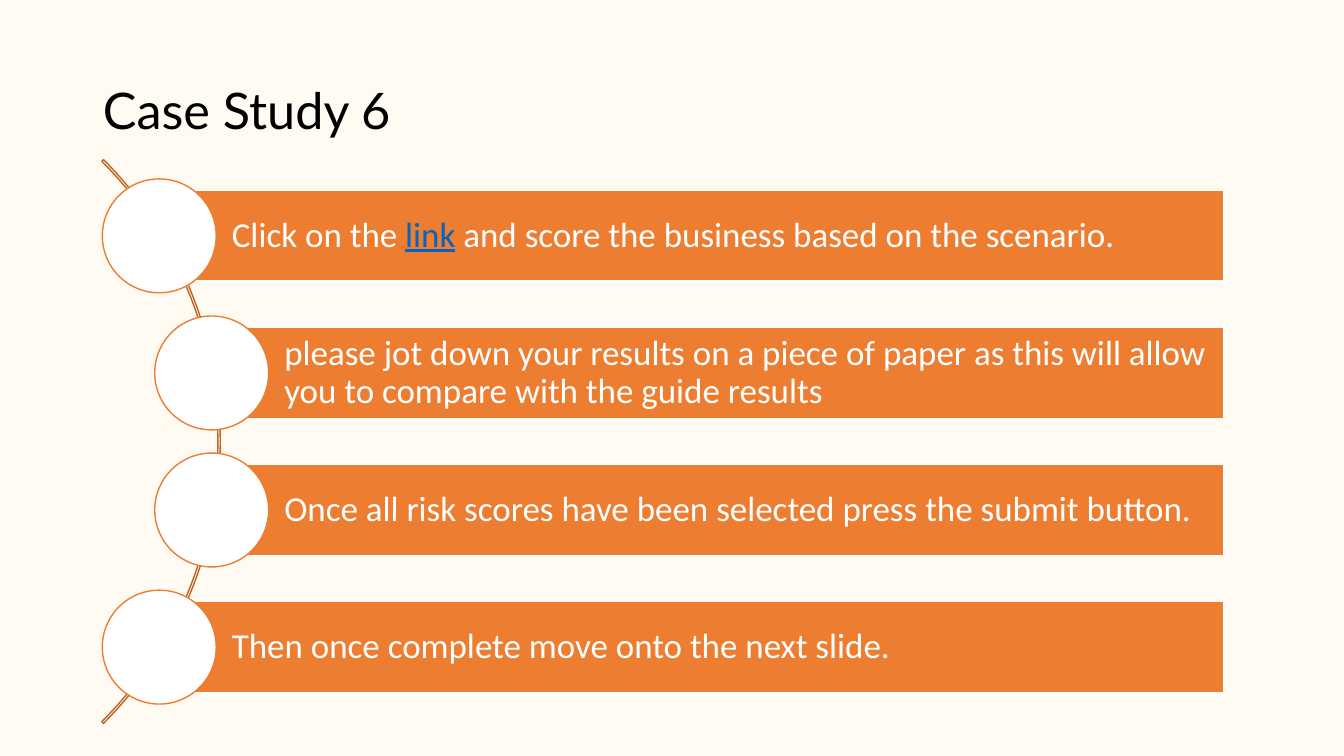
from dataclasses import dataclass
from lxml.etree import SubElement
from pptx import Presentation
from pptx.dml.color import RGBColor as Color
from pptx.enum.shapes import MSO_SHAPE as Shape
from pptx.enum.text import MSO_ANCHOR as Anchor, PP_ALIGN as Align
from pptx.oxml.ns import qn
from pptx.util import Inches, Pt


@dataclass(frozen=True)
class Theme:
    background: str = "FFFBEF"
    background_alpha: int = 79
    title: str = "000000"
    accent: str = "ED7D31"
    arc: str = "BE6427"
    light: str = "FFFFFF"
    link: str = "0563C1"
    title_font: str = "Lato"
    body_font: str = "Calibri"
    title_size: int = 36
    body_size: int = 25
    line_width: int = 1


@dataclass(frozen=True)
class Grid:
    left: float = 1.58
    right: float = 12.14
    column: float = 0.52
    middle: float = 4.38
    row: float = 1.36

    def x(self, column):
        return self.left + column * self.column

    def y(self, row, rows):
        return self.middle + (row - (rows - 1) / 2) * self.row


THEME = Theme()
GRID = Grid()
BAR_HEIGHT = 0.9
CIRCLE_SIZE = 1.13
ARC_SIZE = 7.91
ARC_CENTER = -1.77
STEPS = [
    (0, [("Click on the ", False), ("link", True),
         (" and score the business based on the scenario.", False)]),
    (1, [("please jot down your results on a piece of paper as this will "
          "allow you to compare with the guide results", False)]),
    (1, [("Once all risk scores have been selected press the submit button.", False)]),
    (0, [("Then once complete move onto the next slide.", False)]),
]


def apply(target, values):
    for name, value in values.items():
        setattr(target, name, value)


def set_background(slide):
    fill = slide.background.fill
    fill.solid()
    fill.fore_color.rgb = Color.from_string(THEME.background)
    color = slide.background._cSld.find(".//" + qn("a:srgbClr"))
    SubElement(color, qn("a:alpha"), val=str(THEME.background_alpha * 1000))


def add_run(paragraph, text, font, size, color, underline=None):
    run = paragraph.add_run()
    run.text = text
    apply(run.font, {"name": font, "size": Pt(size), "underline": underline})
    run.font.color.rgb = Color.from_string(color)


def set_title(slide, text):
    title = slide.shapes.title
    apply(title, {"left": Inches(0.92), "top": Inches(0.4),
                  "width": Inches(9.75), "height": Inches(1.45)})
    title.text_frame.vertical_anchor = Anchor.MIDDLE
    paragraph = title.text_frame.paragraphs[0]
    apply(paragraph, {"alignment": Align.LEFT, "line_spacing": 0.9})
    add_run(paragraph, text, THEME.title_font, THEME.title_size, THEME.title)


def add_shape(slide, kind, left, middle, width, height, line, fill=None):
    shape = slide.shapes.add_shape(
        kind, Inches(left), Inches(middle - height / 2), Inches(width), Inches(height))
    shape.shadow.inherit = False
    if fill:
        shape.fill.solid()
        shape.fill.fore_color.rgb = Color.from_string(fill)
    else:
        shape.fill.background()
    shape.line.color.rgb = Color.from_string(line)
    shape.line.width = Pt(THEME.line_width)
    return shape


def add_arc(slide):
    arc = add_shape(slide, Shape.BLOCK_ARC, ARC_CENTER - ARC_SIZE / 2, GRID.middle,
                    ARC_SIZE, ARC_SIZE, THEME.arc)
    for index, value in enumerate((189, 27, 0.003)):
        arc.adjustments[index] = value


def add_step(slide, column, middle, parts):
    left = GRID.x(column)
    bar = add_shape(slide, Shape.RECTANGLE, left, middle, GRID.right - left,
                    BAR_HEIGHT, THEME.light, THEME.accent)
    frame = bar.text_frame
    inset = Inches(0.07)
    apply(frame, {"word_wrap": True, "vertical_anchor": Anchor.MIDDLE,
                  "margin_left": Inches(0.72), "margin_top": inset,
                  "margin_right": inset, "margin_bottom": inset})
    paragraph = frame.paragraphs[0]
    apply(paragraph, {"alignment": Align.LEFT, "line_spacing": 0.9})
    for text, linked in parts:
        add_run(paragraph, text, THEME.body_font, THEME.body_size,
                THEME.link if linked else THEME.light, linked or None)
    add_shape(slide, Shape.OVAL, left - CIRCLE_SIZE / 2, middle, CIRCLE_SIZE,
              CIRCLE_SIZE, THEME.accent, THEME.light)


def main():
    presentation = Presentation()
    apply(presentation, {"slide_width": Inches(13.33), "slide_height": Inches(7.5)})
    slide = presentation.slides.add_slide(presentation.slide_layouts[5])
    set_background(slide)
    set_title(slide, "Case Study 6")
    add_arc(slide)
    for row, (column, parts) in enumerate(STEPS):
        add_step(slide, column, GRID.y(row, len(STEPS)), parts)
    presentation.save("out.pptx")


if __name__ == "__main__":
    main()
